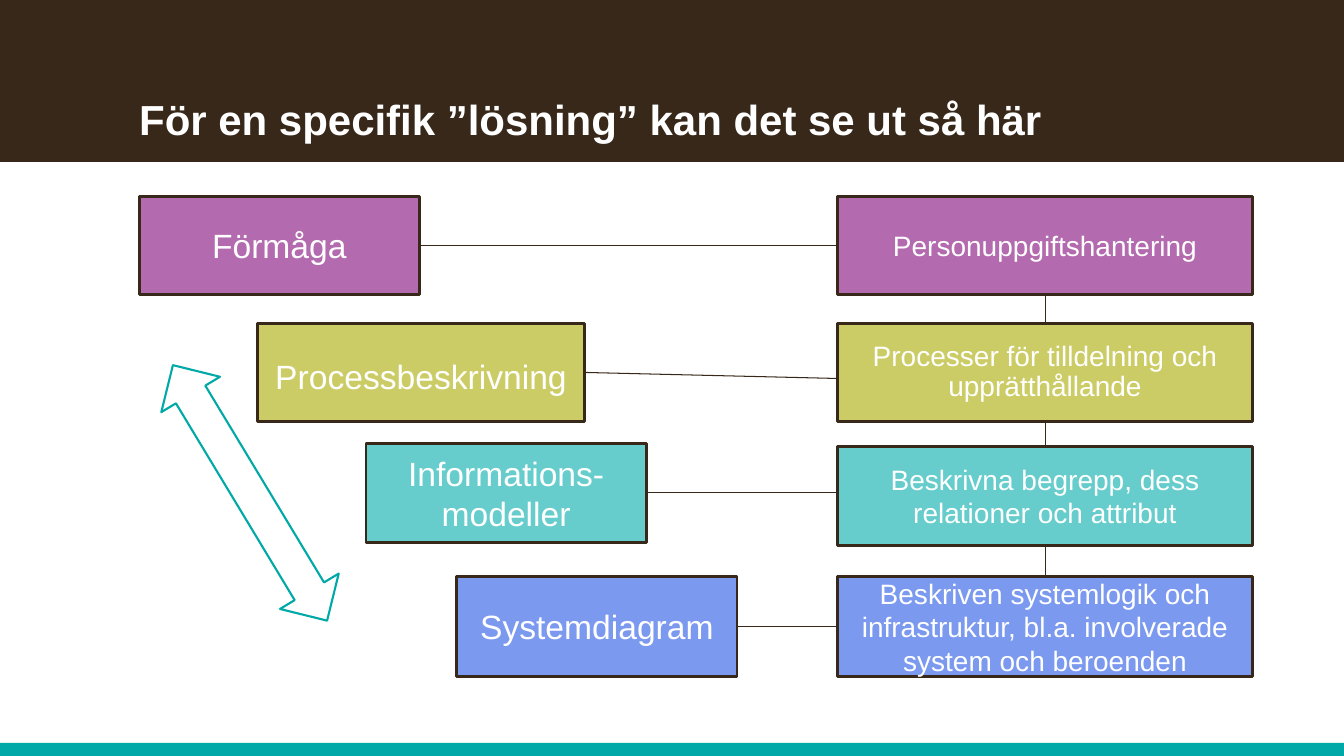
from dataclasses import dataclass

from lxml import etree
from pptx import Presentation
from pptx.dml.color import RGBColor
from pptx.enum.shapes import MSO_CONNECTOR, MSO_SHAPE
from pptx.enum.text import MSO_ANCHOR, PP_ALIGN
from pptx.oxml.ns import qn
from pptx.util import Inches, Pt

RECTANGLE, DOUBLE_ARROW = MSO_SHAPE.RECTANGLE, MSO_SHAPE.UP_DOWN_ARROW
STRAIGHT = MSO_CONNECTOR.STRAIGHT
MIDDLE, BOTTOM = MSO_ANCHOR.MIDDLE, MSO_ANCHOR.BOTTOM
LEFT, CENTER = PP_ALIGN.LEFT, PP_ALIGN.CENTER
TOP_SIDE, LEFT_SIDE, BOTTOM_SIDE, RIGHT_SIDE = range(4)

WIDTH, HEIGHT = 13.33, 7.5
HEADER_HEIGHT, FOOTER_HEIGHT = 1.59, 0.13
MARGIN = 1.38
DETAIL_LEFT, DETAIL_WIDTH = 8.31, 4.11


@dataclass(frozen=True)
class Theme:
    font: str = "Arial"
    dark: str = "382819"
    accent: str = "00A9A7"
    white: str = "FFFFFF"
    purple: str = "B36AAE"
    olive: str = "CCCC66"
    turquoise: str = "66CCCC"
    blue: str = "7B99EF"
    title_size: int = 30
    step_size: int = 24
    detail_size: int = 20
    border: float = 2
    arrow_border: float = 1.5
    link: float = 0.75


THEME = Theme()


@dataclass(frozen=True)
class Level:
    """One row: a step box, its detail box and where their link ends."""
    step: str
    detail: str
    color: str
    left: float
    width: float
    top: float
    height: float
    detail_drop: float = 0
    link_drop: float | None = None
    step_spacing: tuple = (None, 0, 0)
    detail_spacing: tuple = (None, 0, 0)


LEVELS = (
    Level("Förmåga", "Personuppgiftshantering", THEME.purple,
          MARGIN, 2.78, 1.95, 0.97),
    Level("Processbeskrivning", "Processer för tilldelning och upprätthållande",
          THEME.olive, 2.55, 3.25, 3.21, 0.97, link_drop=0.06,
          step_spacing=(1.2, 5, 5), detail_spacing=(0.9, 10, 0)),
    Level("Informations-modeller", "Beskrivna begrepp, dess relationer och attribut",
          THEME.turquoise, 3.63, 2.78, 4.4, 0.98, detail_drop=0.03, link_drop=0),
    Level("Systemdiagram",
          "Beskriven systemlogik och infrastruktur, bl.a. involverade system och beroenden",
          THEME.blue, 4.53, 2.78, 5.72, 0.99),
)


def rgb(color):
    return RGBColor.from_string(color)


def add_block(slide, box, fill, line=None, line_width=THEME.border, kind=RECTANGLE):
    shape = slide.shapes.add_shape(kind, *map(Inches, box))
    shape.shadow.inherit = False
    shape.fill.solid()
    shape.fill.fore_color.rgb = rgb(fill)
    if line:
        shape.line.color.rgb = rgb(line)
        shape.line.width = Pt(line_width)
    else:
        shape.line.fill.background()
    return shape


def write(shape, text, size, anchor=MIDDLE, alignment=CENTER, bold=False,
          spacing=(None, 0, 0)):
    frame = shape.text_frame
    frame.word_wrap = True
    frame.vertical_anchor = anchor
    paragraph = frame.paragraphs[0]
    paragraph.text = text
    paragraph.alignment = alignment
    line_spacing, before, after = spacing
    paragraph.line_spacing = line_spacing
    paragraph.space_before, paragraph.space_after = Pt(before), Pt(after)
    font = paragraph.font
    font.name, font.size, font.bold = THEME.font, Pt(size), bold
    font.color.rgb = rgb(THEME.white)
    return frame


def add_link(slide, start, end):
    link = slide.shapes.add_connector(STRAIGHT, *map(Inches, start + end))
    link.line.color.rgb = rgb(THEME.dark)
    link.line.width = Pt(THEME.link)
    etree.SubElement(link._element.spPr, qn("a:effectLst"))
    return link


def add_frame(slide, text):
    """Footer strip, header band and title."""
    add_block(slide, (0, HEIGHT - FOOTER_HEIGHT, WIDTH, FOOTER_HEIGHT), THEME.accent)
    add_block(slide, (0, 0, WIDTH, HEADER_HEIGHT), THEME.dark, THEME.dark)
    title = slide.shapes.add_textbox(*map(Inches, (MARGIN, 0.41, 10.39, 1.02)))
    frame = write(title, text, THEME.title_size, BOTTOM, LEFT, bold=True)
    frame.margin_left = frame.margin_right = 0
    frame.margin_top = frame.margin_bottom = 0


def add_level(slide, level):
    """Place both boxes of a row with their link, and return the detail box."""
    step = add_block(slide, (level.left, level.top, level.width, level.height),
                     level.color, THEME.dark)
    write(step, level.step, THEME.step_size, spacing=level.step_spacing)
    detail = add_block(slide, (DETAIL_LEFT, level.top + level.detail_drop,
                               DETAIL_WIDTH, level.height), level.color, THEME.dark)
    write(detail, level.detail, THEME.detail_size, spacing=level.detail_spacing)
    middle = level.top + level.height / 2
    link = add_link(slide, (level.left + level.width, middle),
                    (DETAIL_LEFT, middle + (level.link_drop or 0)))
    link.begin_connect(step, RIGHT_SIDE)
    if level.link_drop is None:
        link.end_connect(detail, LEFT_SIDE)
    return detail


def add_levels(slide, levels):
    """Place all rows over one vertical line through the detail boxes."""
    center = DETAIL_LEFT + DETAIL_WIDTH / 2
    spine = add_link(slide, (center, levels[0].top + levels[0].height),
                     (center, levels[-1].top))
    details = [add_level(slide, level) for level in levels]
    spine.begin_connect(details[0], BOTTOM_SIDE)
    spine.end_connect(details[-1], TOP_SIDE)


def add_direction_arrow(slide, box, rotation):
    arrow = add_block(slide, box, THEME.white, THEME.accent, THEME.arrow_border,
                      DOUBLE_ARROW)
    arrow.rotation = rotation


def main():
    presentation = Presentation()
    presentation.slide_width, presentation.slide_height = Inches(WIDTH), Inches(HEIGHT)
    slide = presentation.slides.add_slide(presentation.slide_layouts[6])
    add_frame(slide, "För en specifik ”lösning” kan det se ut så här")
    add_levels(slide, LEVELS)
    add_direction_arrow(slide, (2.14, 3.41, 0.68, 2.96), 328.9)
    presentation.save("out.pptx")


if __name__ == "__main__":
    main()
